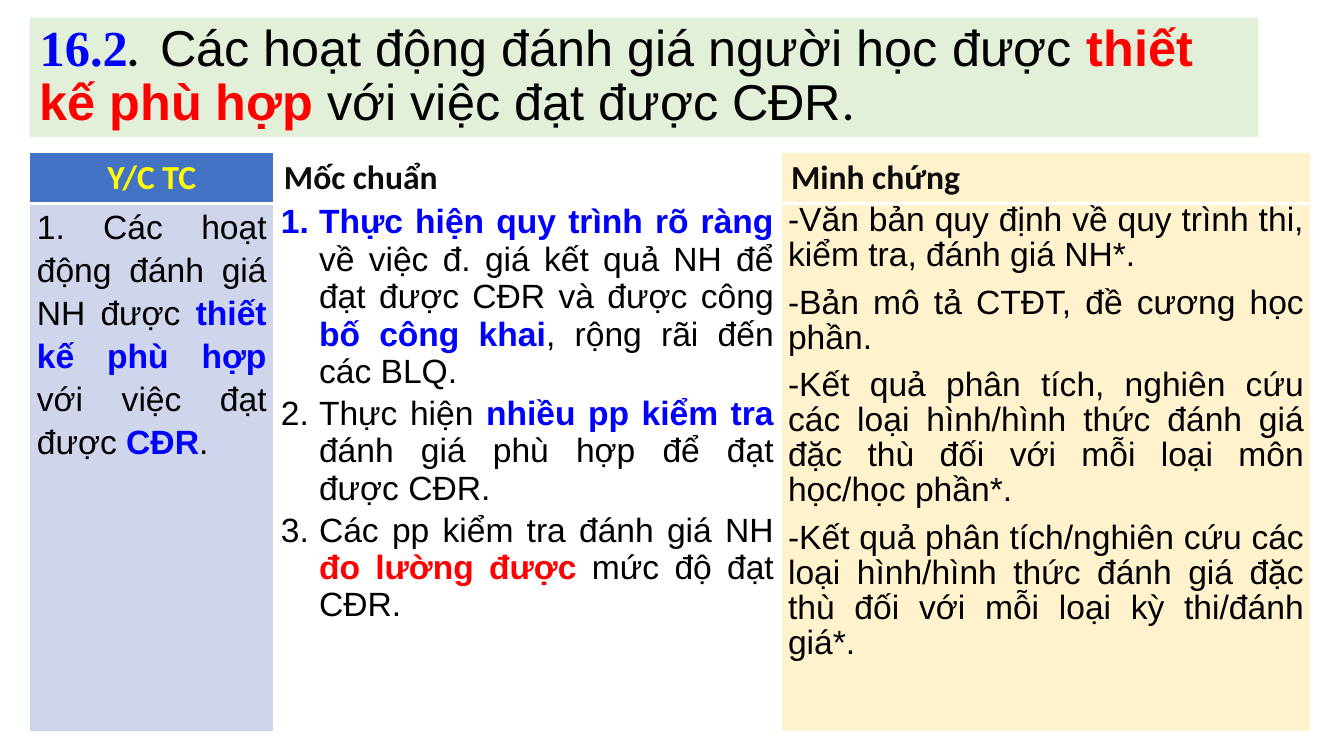
import pptx
import pptx.dml.color
import pptx.enum.shapes
import pptx.enum.text
import pptx.oxml
import pptx.oxml.ns
import pptx.util
from dataclasses import dataclass
from pptx.util import Cm, Pt

ALIGN = pptx.enum.text.PP_ALIGN
ANCHOR = pptx.enum.text.MSO_ANCHOR
LEFT_EDGE = Cm(0.75)


@dataclass(frozen=True)
class Theme:
    black: str = "000000"
    ink: str = "0D0D0D"
    blue: str = "0000FF"
    red: str = "FF0000"
    yellow: str = "FFFF00"
    white: str = "FFFFFF"
    green_fill: str = "E2F0D9"
    header_fill: str = "4472C4"
    band_fill: str = "CFD5EA"
    cream_fill: str = "FFF2CC"
    body_font: str = "Arial"
    header_font: str = "Calibri"
    number_font: str = "Times New Roman"
    title_size: int = 36
    dot_size: int = 32
    table_size: int = 24


THEME = Theme()


def rgb(color):
    return pptx.dml.color.RGBColor.from_string(color)


def paint(target, color):
    target.fill.solid()
    target.fill.fore_color.rgb = rgb(color)


def add_span(para, text, color=THEME.black, bold=False, italic=False,
             size=THEME.table_size, font=THEME.body_font):
    span = para.add_run()
    span.text = text
    span.font.size = Pt(size)
    span.font.name = font
    span.font.bold = bold
    span.font.italic = italic
    span.font.color.rgb = rgb(color)


def fill_paragraphs(frame, paragraphs, align=ALIGN.JUSTIFY, line=1.0,
                    before=3, after=0, numbered=False):
    """Each paragraph is a list of (text, accent colour or None) pairs."""
    for index, parts in enumerate(paragraphs):
        para = frame.add_paragraph() if index else frame.paragraphs[0]
        para.alignment = align
        para.line_spacing = line
        para.space_before = Pt(before)
        para.space_after = Pt(after)
        if numbered:
            number_paragraph(para)
        for text, accent in parts:
            add_span(para, text, accent or THEME.black, bold=bool(accent))


def number_paragraph(para):
    properties = para._p.get_or_add_pPr()
    indent = Cm(0.96)
    properties.set("marL", str(indent))
    properties.set("indent", str(-indent))
    properties.append(pptx.oxml.parse_xml(
        f'<a:buAutoNum {pptx.oxml.ns.nsdecls("a")} type="arabicPeriod"/>'))


def set_borders(cell, bottom=1):
    widths = {"lnL": 1, "lnR": 1, "lnT": 1, "lnB": bottom}
    for index, (side, width) in enumerate(widths.items()):
        cell._tc.get_or_add_tcPr().insert(index, pptx.oxml.parse_xml(
            f'<a:{side} {pptx.oxml.ns.nsdecls("a")} w="{Pt(width)}">'
            f'<a:solidFill><a:srgbClr val="{THEME.white}"/></a:solidFill></a:{side}>'))


def add_title(page):
    box = page.shapes.add_shape(pptx.enum.shapes.MSO_SHAPE.RECTANGLE,
                                LEFT_EDGE, Cm(0.44), Cm(30.96), Cm(3.02))
    box.shadow.inherit = False
    box.line.fill.background()
    paint(box, THEME.green_fill)
    frame = box.text_frame
    frame.word_wrap = True
    frame.vertical_anchor = ANCHOR.MIDDLE
    para = frame.paragraphs[0]
    para.alignment = ALIGN.LEFT
    para.line_spacing = 0.9
    size = THEME.title_size
    add_span(para, "16.2", THEME.blue, True, size=size, font=THEME.number_font)
    add_span(para, ".  ", bold=True, italic=True, size=THEME.dot_size,
             font=THEME.header_font)
    add_span(para, "Các hoạt động đánh giá người học được ", size=size)
    add_span(para, "thiết kế phù hợp ", THEME.red, True, size=size)
    add_span(para, "với việc đạt được CĐR", size=size)
    add_span(para, ".", size=size, font=THEME.header_font)


def add_grid(page):
    widths, heights = (6.15, 12.78, 13.36), (1.28, 13.31)
    table = page.shapes.add_table(len(heights), len(widths), LEFT_EDGE, Cm(3.84),
                                  Cm(sum(widths)), Cm(sum(heights))).table
    for column, width in zip(table.columns, widths):
        column.width = Cm(width)
    for row, height in zip(table.rows, heights):
        row.height = Cm(height)
    return table


def add_header_cell(cell, text, color, fill, align=ALIGN.LEFT):
    paint(cell, fill)
    set_borders(cell, bottom=3)
    para = cell.text_frame.paragraphs[0]
    para.alignment = align
    add_span(para, text, color, True, font=THEME.header_font)


def add_body_cell(cell, paragraphs, fill, **layout):
    paint(cell, fill)
    set_borders(cell)
    cell.margin_left = cell.margin_right = Cm(0.18)
    cell.margin_top = cell.margin_bottom = 0
    fill_paragraphs(cell.text_frame, paragraphs, **layout)


def main():
    deck = pptx.Presentation()
    deck.slide_width, deck.slide_height = Cm(33.87), Cm(19.05)
    page = deck.slides.add_slide(deck.slide_layouts[6])
    add_title(page)
    table = add_grid(page)

    # Header row
    add_header_cell(table.cell(0, 0), "Y/C TC", THEME.yellow,
                    THEME.header_fill, ALIGN.CENTER)
    add_header_cell(table.cell(0, 1), "Mốc chuẩn", THEME.ink, THEME.white)
    add_header_cell(table.cell(0, 2), "Minh chứng", THEME.ink, THEME.cream_fill)

    # Requirement
    add_body_cell(table.cell(1, 0), [[
        ("1. Các hoạt động đánh giá NH được ", None),
        ("thiết kế phù hợp ", THEME.blue),
        ("với việc đạt được ", None),
        ("CĐR", THEME.blue),
        (".", None),
    ]], THEME.band_fill, line=1.15)

    # Benchmarks
    add_body_cell(table.cell(1, 1), [
        [("Thực hiện quy trình rõ ràng ", THEME.blue),
         ("về việc đ. giá kết quả NH để đạt được CĐR và được công ", None),
         ("bố công khai", THEME.blue),
         (", rộng rãi đến các BLQ.", None)],
        [("Thực hiện ", None),
         ("nhiều pp kiểm tra ", THEME.blue),
         ("đánh giá phù hợp để đạt được CĐR.", None)],
        [("Các pp kiểm tra đánh giá NH ", None),
         ("đo lường được ", THEME.red),
         ("mức độ đạt CĐR.", None)],
    ], THEME.white, numbered=True)

    # Evidence
    evidence = (
        "-Văn bản quy định về quy trình thi, kiểm tra, đánh giá NH*.",
        "-Bản mô tả CTĐT, đề cương học phần.",
        "-Kết quả phân tích, nghiên cứu các loại hình/hình thức đánh giá "
        "đặc thù đối với mỗi loại môn học/học phần*.",
        "-Kết quả phân tích/nghiên cứu các loại hình/hình thức đánh giá "
        "đặc thù đối với mỗi loại kỳ thi/đánh giá*.",
    )
    add_body_cell(table.cell(1, 2), [[(text, None)] for text in evidence],
                  THEME.cream_fill, line=Pt(25), after=6)

    deck.save("out.pptx")


if __name__ == "__main__":
    main()
